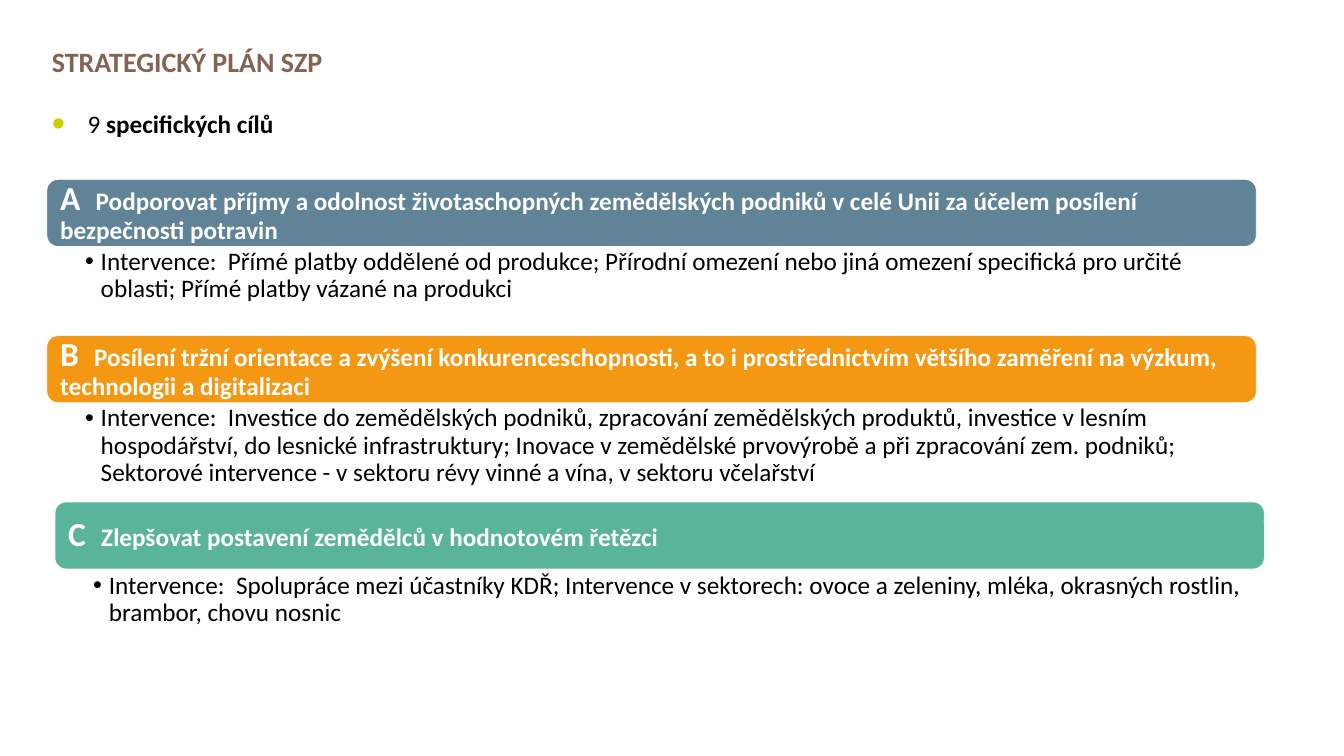
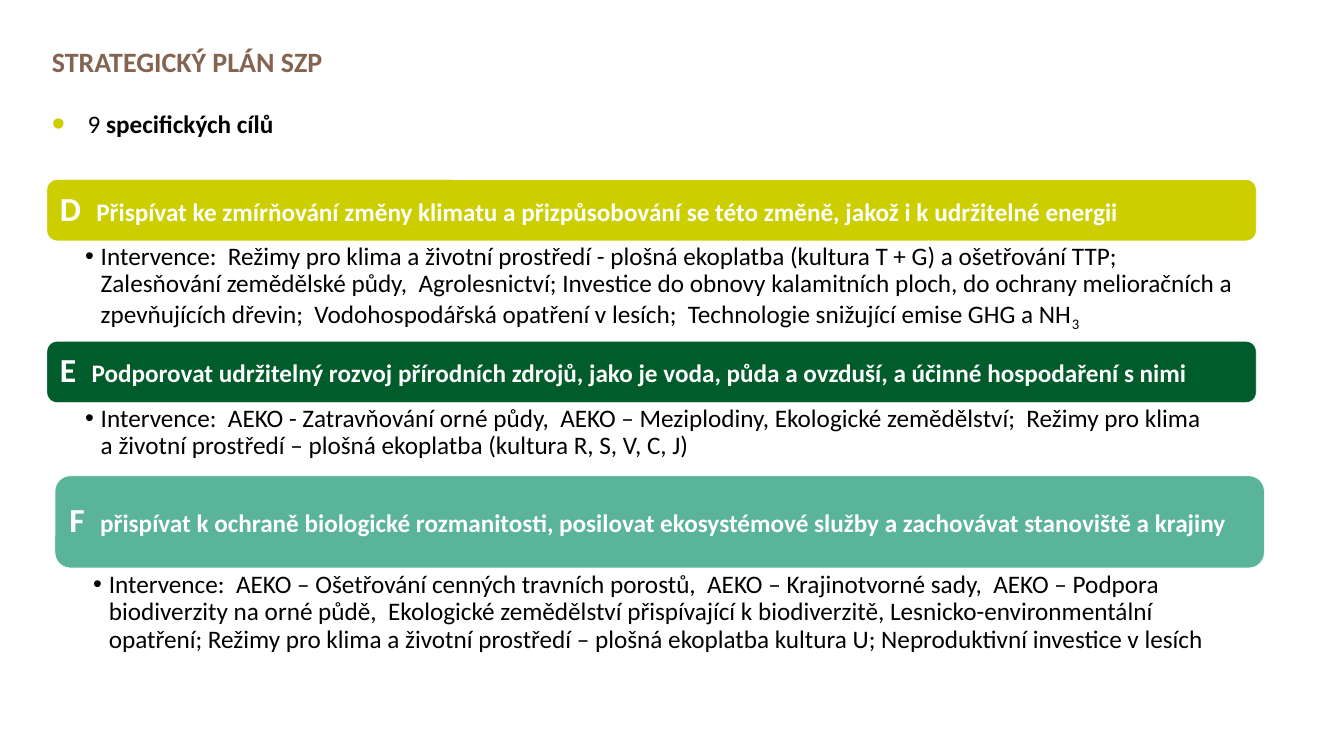
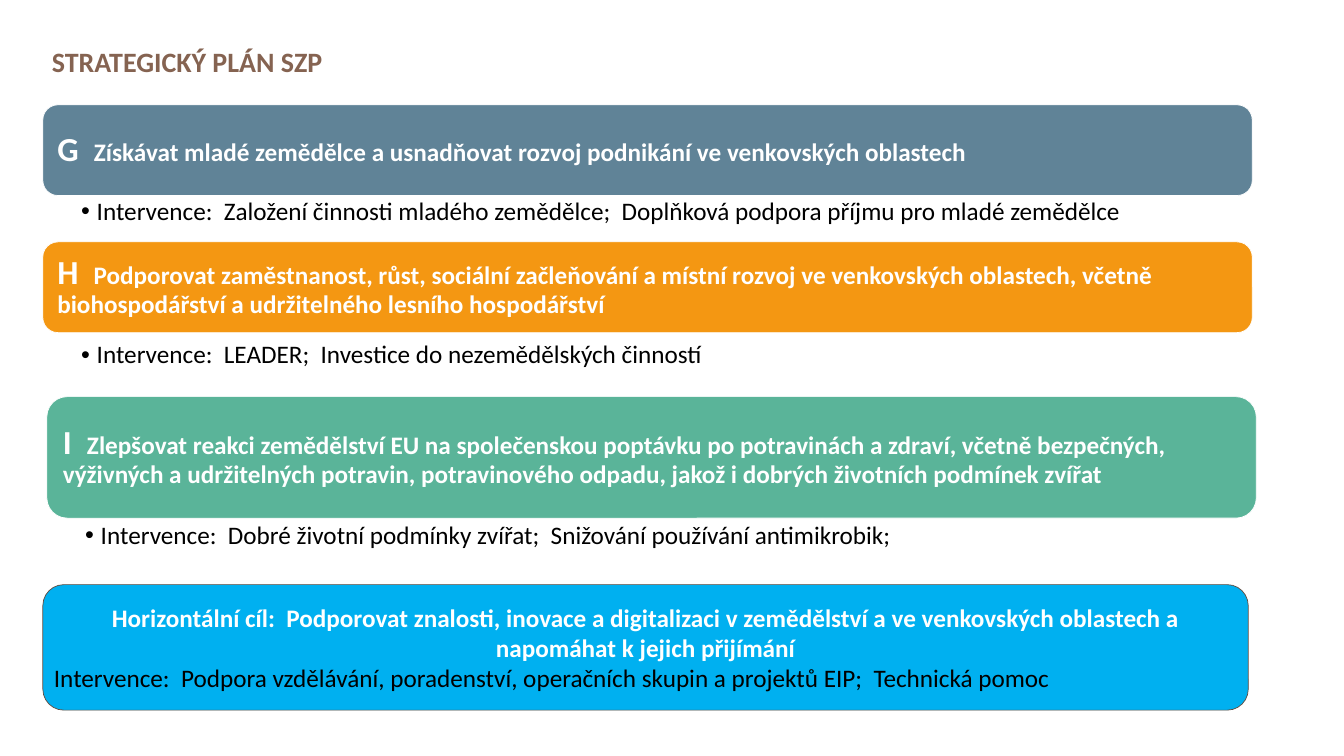
from lxml.etree import SubElement
from pptx import Presentation
from pptx.dml.color import RGBColor
from pptx.enum.shapes import MSO_SHAPE as Shape
from pptx.enum.text import MSO_ANCHOR as Anchor, PP_ALIGN as Align
from pptx.oxml.ns import qn
from pptx.util import Inches, Pt

TITLE = "STRATEGICKÝ PLÁN SZP"
AIMS = [("9 ", {}), ("specifických cílů", {"bold": True})]
BLUE, ORANGE, TEAL = "608397", "F49712", "5AB499"
LIME, GREEN, SKY = "CDCE00", "005C2B", "00B0F0"
BROWN, DARK, WHITE, BLACK = "856351", "62493C", "FFFFFF", "000000"
FONT, WIDE = "Calibri", 24

# left, top, height, fill, letter, goal, note top, note height, note, subscript
SLIDES = [
    {"aims": True, "bands": [
        (0.93, 3.56, 1.33, BLUE, "A", "Podporovat příjmy a odolnost životaschopných zemědělských podniků v celé Unii za účelem posílení bezpečnosti potravin",
         4.89, 1.77, "Přímé platby oddělené od produkce; Přírodní omezení nebo jiná omezení specifická pro určité oblasti; Přímé platby vázané na produkci", ""),
        (0.93, 6.66, 1.33, ORANGE, "B", "Posílení tržní orientace a zvýšení konkurenceschopnosti, a to i prostřednictvím většího zaměření na výzkum, technologii a digitalizaci",
         7.99, 1.75, "Investice do zemědělských podniků, zpracování zemědělských produktů, investice v lesním hospodářství, do lesnické infrastruktury; Inovace v zemědělské prvovýrobě a při zpracování zem. podniků; Sektorové intervence - v sektoru révy vinné a vína, v sektoru včelařství", ""),
        (1.09, 9.96, 1.33, TEAL, "C", "Zlepšovat postavení zemědělců v hodnotovém řetězci",
         11.31, 1.18, "Spolupráce mezi účastníky KDŘ; Intervence v sektorech: ovoce a zeleniny, mléka, okrasných rostlin, brambor, chovu nosnic", ""),
    ]},
    {"aims": True, "bands": [
        (0.93, 3.56, 1.22, LIME, "D", "Přispívat ke zmírňování změny klimatu a přizpůsobování se této změně, jakož i k udržitelné energii",
         4.79, 1.99, "Režimy pro klima a životní prostředí - plošná ekoplatba (kultura T + G) a ošetřování TTP;  Zalesňování zemědělské půdy,  Agrolesnictví; Investice do obnovy kalamitních ploch, do ochrany melioračních a zpevňujících dřevin;  Vodohospodářská opatření v lesích;  Technologie snižující emise GHG a NH", "3"),
        (0.93, 6.77, 1.22, GREEN, "E", "Podporovat udržitelný rozvoj přírodních zdrojů, jako je voda, půda a ovzduší, a účinné hospodaření s nimi",
         8, 1.74, "AEKO - Zatravňování orné půdy,  AEKO – Meziplodiny, Ekologické zemědělství;  Režimy pro klima \na životní prostředí – plošná ekoplatba (kultura R, S, V, C, J)", ""),
        (1.09, 9.44, 1.83, TEAL, "F", "přispívat k ochraně biologické rozmanitosti, posilovat ekosystémové služby a zachovávat stanoviště a krajiny",
         11.3, 1.69, "AEKO – Ošetřování cenných travních porostů,  AEKO – Krajinotvorné sady,  AEKO – Podpora biodiverzity na orné půdě,  Ekologické zemědělství přispívající k biodiverzitě, Lesnicko-environmentální opatření; Režimy pro klima a životní prostředí – plošná ekoplatba kultura U; Neproduktivní investice v lesích", ""),
    ]},
    {"aims": False, "bands": [
        (0.85, 2.08, 1.8, BLUE, "G", "Získávat mladé zemědělce a usnadňovat rozvoj podnikání ve venkovských oblastech",
         3.89, 1.05, "Založení činnosti mladého zemědělce;  Doplňková podpora příjmu pro mladé zemědělce", ""),
        (0.85, 4.8, 1.8, ORANGE, "H", "Podporovat zaměstnanost, růst, sociální začleňování a místní rozvoj ve venkovských oblastech, včetně biohospodářství a udržitelného lesního hospodářství",
         6.74, 1.52, "LEADER;  Investice do nezemědělských činností", ""),
        (0.93, 7.87, 2.41, TEAL, "I", "Zlepšovat reakci zemědělství EU na společenskou poptávku po potravinách a zdraví, včetně bezpečných, výživných a udržitelných potravin, potravinového odpadu, jakož i dobrých životních podmínek zvířat",
         10.32, 1.18, "Dobré životní podmínky zvířat;  Snižování používání antimikrobik;", ""),
    ], "cross": (
        "Horizontální cíl:  Podporovat znalosti, inovace a digitalizaci v zemědělství a ve venkovských oblastech a napomáhat k jejich přijímání",
        "Intervence:  Podpora vzdělávání, poradenství, operačních skupin a projektů EIP;  Technická pomoc")},
]


def paint(text):
    return RGBColor.from_string(text)


def assign(item, values):
    for key, value in values.items():
        setattr(item, key, value)


def frame(shape, pads=(0.1, 0.05, 0.1, 0.05), anchor=Anchor.TOP):
    text = shape.text_frame
    sides = ("margin_left", "margin_top", "margin_right", "margin_bottom")
    assign(text, {side: Inches(pad) for side, pad in zip(sides, pads)})
    assign(text, {"word_wrap": True, "vertical_anchor": anchor})
    return text


def write(para, runs, color, space=0.9, align=Align.LEFT):
    assign(para, {"line_spacing": space, "alignment": align, "space_before": Pt(0)})
    for text, style in runs:
        for row, part in enumerate(text.split("\n")):
            if row:
                para.add_line_break()
            run = para.add_run()
            run.text = part
            look = {"name": FONT, "size": Pt(36), "bold": False} | style
            sub = look.pop("sub", False)
            assign(run.font, look)
            run.font.color.rgb = paint(color)
            if sub:
                run._r.get_or_add_rPr().set("baseline", "-25000")


def bullet(para, indent, color=None, size=100):
    props = para._p.get_or_add_pPr()
    props.set("marL", str(Inches(indent)))
    props.set("indent", str(-Inches(indent)))
    if color:
        SubElement(SubElement(props, qn("a:buClr")), qn("a:srgbClr"), val=color)
    SubElement(props, qn("a:buSzPct"), val=str(size * 1000))
    SubElement(props, qn("a:buFont"), typeface="Arial")
    SubElement(props, qn("a:buChar"), char="•")


def label(slide, box, pads):
    return frame(slide.shapes.add_textbox(*map(Inches, box)), pads)


def panel(slide, box, fill, line):
    shape = slide.shapes.add_shape(Shape.ROUNDED_RECTANGLE, *map(Inches, box))
    shape.shadow.inherit = False
    shape.fill.solid()
    shape.fill.fore_color.rgb = paint(fill)
    shape.line.color.rgb = paint(line)
    shape.line.width = Pt(1)
    return shape


def head(slide):
    shape = slide.shapes.title
    box = map(Inches, (0.93, 0.91, 25.25, 0.75))
    assign(shape, dict(zip(("left", "top", "width", "height"), box)))
    style = {"size": Pt(40), "bold": True}
    write(frame(shape).paragraphs[0], [(TITLE, style)], BROWN)


def aims(slide):
    para = label(slide, (0.93, 2.17, 25.25, 0.7), (0.1, 0.05, 0.1, 0.05)).paragraphs[0]
    bullet(para, 0.71, LIME, 150)
    write(para, AIMS, BLACK)


def band(slide, left, top, high, fill, mark, goal, low, deep, note, sub):
    shape = panel(slide, (left, top, WIDE, high), fill, WHITE)
    runs = [(mark + "  ", {"size": Pt(48), "bold": True}), (goal, {"bold": True})]
    write(frame(shape, (0.2, 0, 0.2, 0), Anchor.MIDDLE).paragraphs[0], runs, WHITE)
    para = label(slide, (left, low, WIDE, deep), (0.76, 0.05, 0.28, 0.05)).paragraphs[0]
    bullet(para, 0.31)
    runs = [("Intervence:  " + note, {})]
    if sub:
        runs.append((sub, {"sub": True}))
    write(para, runs, BLACK)


def cross(slide, goal, note):
    shape = panel(slide, (0.85, 11.6, 23.92, 2.49), SKY, DARK)
    text = frame(shape, anchor=Anchor.MIDDLE)
    write(text.paragraphs[0], [(goal, {"bold": True})], WHITE, 1.0, Align.CENTER)
    write(text.add_paragraph(), [(note, {})], BLACK, 1.0)


def main():
    """Build the slides on the goals of the plan."""
    deck = Presentation()
    assign(deck, {"slide_width": Inches(26.67), "slide_height": Inches(15)})
    for data in SLIDES:
        slide = deck.slides.add_slide(deck.slide_layouts[5])
        head(slide)
        if data["aims"]:
            aims(slide)
        for row in data["bands"]:
            band(slide, *row)
        if "cross" in data:
            cross(slide, *data["cross"])
    deck.save("out.pptx")


if __name__ == "__main__":
    main()
